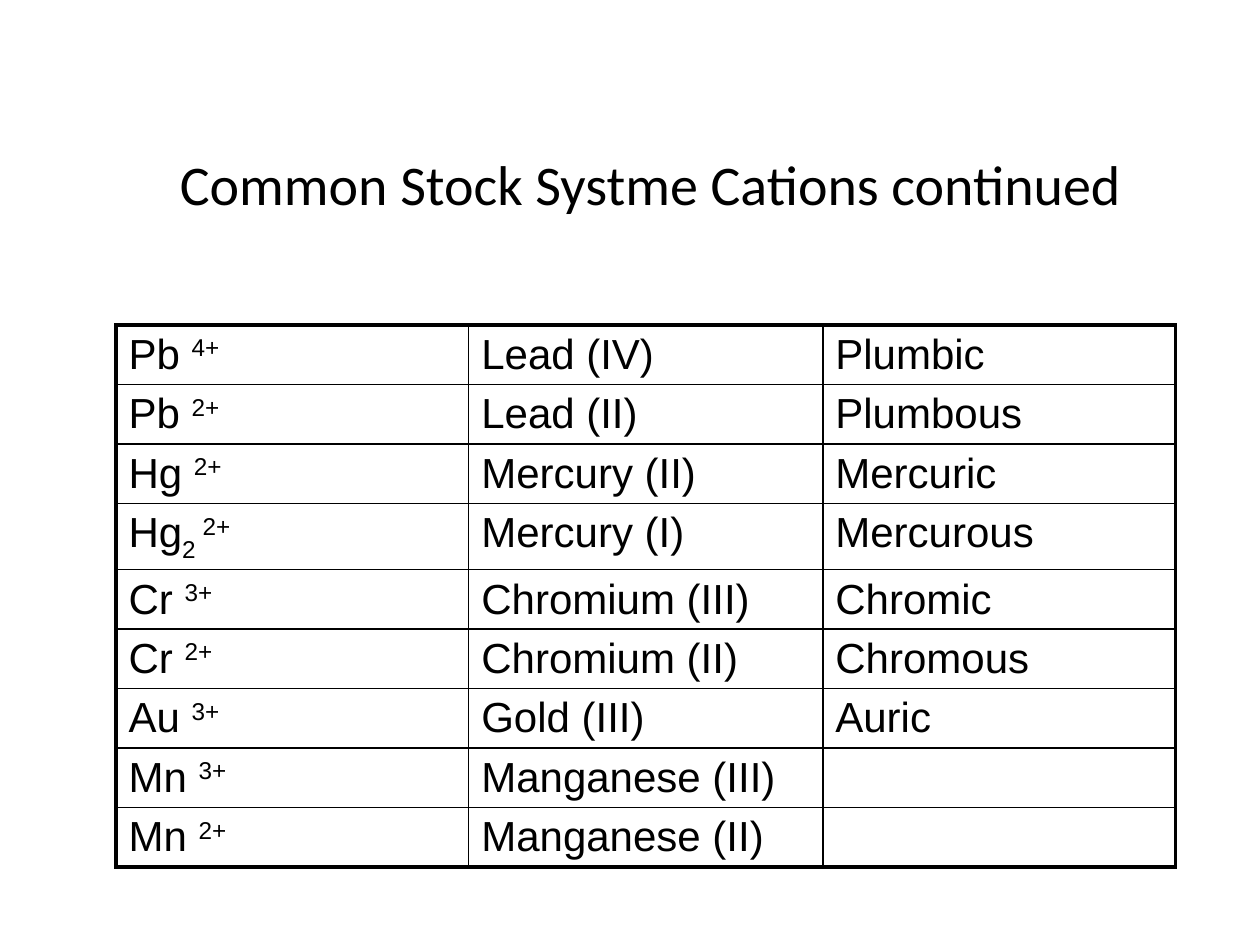
from pptx import Presentation
from pptx.dml.color import RGBColor
from pptx.enum.text import MSO_ANCHOR, PP_ALIGN
from pptx.oxml.ns import qn
from pptx.util import Inches, Pt
from lxml.etree import SubElement

BLACK = RGBColor(0x00, 0x00, 0x00)
TITLE_FONT = {"name": "Calibri", "size": Pt(32), "bold": False}
CELL_FONT = {"name": "Arial", "size": Pt(24), "bold": False}
OUTER, INNER = Pt(2.25), Pt(1)
RAISED, LOWERED = 30000, -25000

# Each ion is a list of (text, baseline shift) pieces
CATIONS = [
    ([("Pb ", 0), ("4+", RAISED)], "Lead (IV)", "Plumbic"),
    ([("Pb ", 0), ("2+", RAISED)], "Lead (II)", "Plumbous"),
    ([("Hg ", 0), ("2+", RAISED)], "Mercury (II)", "Mercuric"),
    ([("Hg", 0), ("2 ", LOWERED), ("2+", RAISED)], "Mercury (I)", "Mercurous"),
    ([("Cr ", 0), ("3+", RAISED)], "Chromium (III)", "Chromic"),
    ([("Cr ", 0), ("2+", RAISED)], "Chromium (II)", "Chromous"),
    ([("Au ", 0), ("3+", RAISED)], "Gold (III)", "Auric"),
    ([("Mn ", 0), ("3+", RAISED)], "Manganese (III)", ""),
    ([("Mn ", 0), ("2+", RAISED)], "Manganese (II)", ""),
]
COLUMN_WIDTHS = [2.8, 2.81, 2.8]
ROW_HEIGHT = 0.45


def format_font(font, values):
    for key, value in values.items():
        setattr(font, key, value)
    font.color.rgb = BLACK


def write_cell(cell, pieces):
    paragraph = cell.text_frame.paragraphs[0]
    format_font(paragraph.font, CELL_FONT)
    # Space before, as a share of the line
    spacing = SubElement(paragraph._p.get_or_add_pPr(), qn("a:spcBef"))
    SubElement(spacing, qn("a:spcPct"), val="20000")
    paragraph._p.pPr.insert(0, spacing)
    for text, shift in pieces:
        run = paragraph.add_run()
        run.text = text
        format_font(run.font, CELL_FONT)
        if shift:
            run.font._element.set("baseline", str(shift))


def set_borders(cell, widths):
    properties = cell._tc.get_or_add_tcPr()
    for index, (side, width) in enumerate(widths.items()):
        line = SubElement(properties, qn(f"a:ln{side}"), w=str(width))
        fill = SubElement(line, qn("a:solidFill"))
        SubElement(fill, qn("a:srgbClr"), val=str(BLACK))
        properties.insert(index, line)


def place_title(slide, left, top, width, height):
    title = slide.shapes.title
    title.left, title.top, title.width, title.height = left, top, width, height
    frame = title.text_frame
    frame.text = "Common Stock Systme Cations continued"
    frame.vertical_anchor = MSO_ANCHOR.MIDDLE
    frame.paragraphs[0].alignment = PP_ALIGN.CENTER
    format_font(frame.paragraphs[0].runs[0].font, TITLE_FONT)


def place_cation_table(slide, left, top, width, height):
    last_row, last_column = len(CATIONS) - 1, len(COLUMN_WIDTHS) - 1
    frame = slide.shapes.add_table(len(CATIONS), len(COLUMN_WIDTHS),
                                   left, top, width, height)
    table = frame.table
    table.first_row = table.horz_banding = False
    for column, column_width in zip(table.columns, COLUMN_WIDTHS):
        column.width = Inches(column_width)
    for row in table.rows:
        row.height = Inches(ROW_HEIGHT)
    frame.height = height

    for r, (ion, stock_name, common_name) in enumerate(CATIONS):
        names = [[(name, 0)] if name else [] for name in (stock_name, common_name)]
        for c, pieces in enumerate([ion, *names]):
            cell = table.cell(r, c)
            cell.fill.background()
            write_cell(cell, pieces)
            # Thick outer frame, thin inner grid
            set_borders(cell, {
                "L": OUTER if c == 0 else INNER,
                "R": OUTER if c == last_column else INNER,
                "T": OUTER if r == 0 else INNER,
                "B": OUTER if r == last_row else INNER,
            })


def main():
    deck = Presentation()
    deck.slide_width, deck.slide_height = Inches(10), Inches(7.5)
    slide = deck.slides.add_slide(deck.slide_layouts[5])
    place_title(slide, Inches(0.83), Inches(0.83), Inches(8.67), Inches(1.25))
    place_cation_table(slide, Inches(0.92), Inches(2.58), Inches(8.41), Inches(4.5))
    deck.save("out.pptx")


if __name__ == "__main__":
    main()
